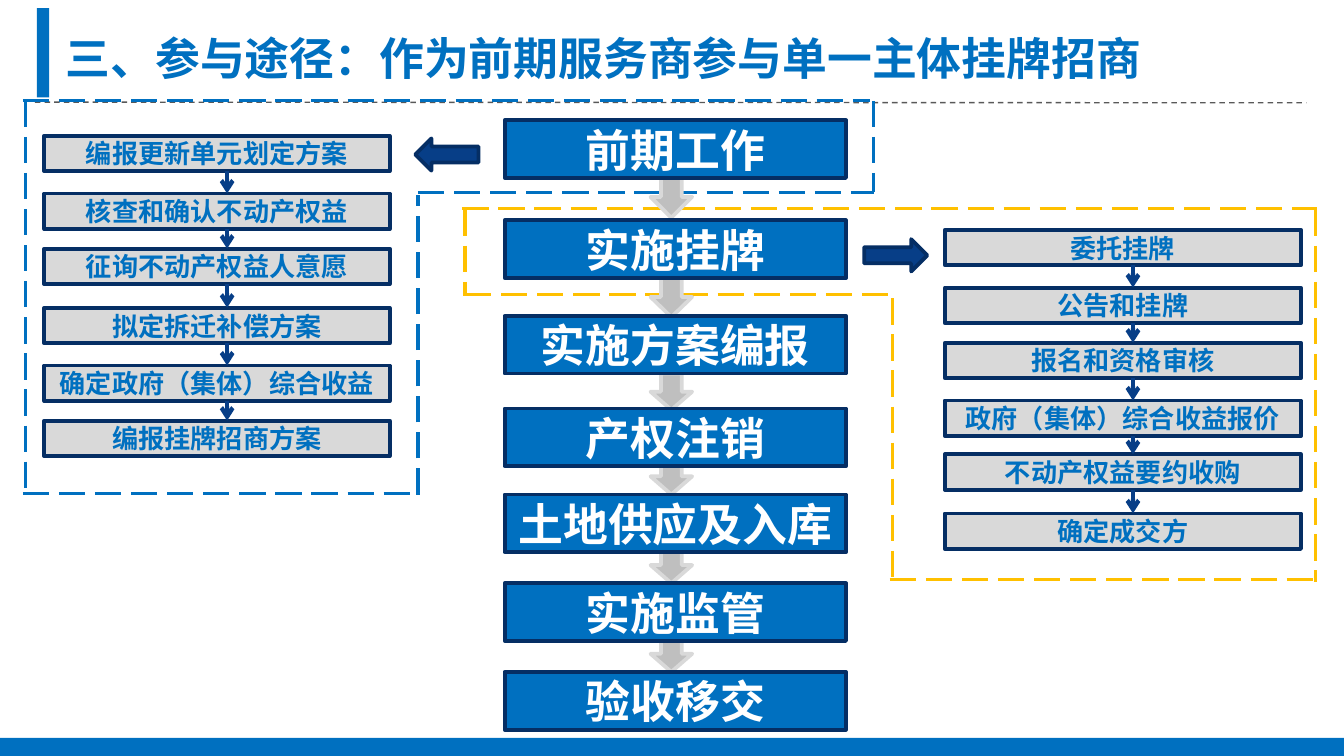
from dataclasses import dataclass
from itertools import pairwise
from typing import NamedTuple

from lxml.etree import SubElement
from pptx import Presentation
from pptx.dml.color import RGBColor
from pptx.enum.dml import MSO_LINE
from pptx.enum.shapes import MSO_CONNECTOR, MSO_SHAPE
from pptx.enum.text import MSO_ANCHOR, MSO_AUTO_SIZE, PP_ALIGN
from pptx.oxml.ns import qn
from pptx.util import Inches, Pt


@dataclass(frozen=True)
class Theme:
    face: str = "Noto Sans CJK SC"
    blue: str = "0070C0"
    navy: str = "052E64"
    deep: str = "073E87"
    pale: str = "D9D9D9"
    grey: str = "BFBFBF"
    dark: str = "595959"
    gold: str = "FFC000"
    white: str = "FFFFFF"
    big: int = 24
    small: int = 14
    edge: float = 2
    link: float = 2.25
    frame: float = 1.75
    rule: float = 0.75


class Area(NamedTuple):
    """Left, top, width and height in grid cells."""
    x: float
    y: float
    w: float
    h: float


class Stage(NamedTuple):
    text: str
    top: float
    arrow: tuple[float, float] | None = None  # top and height


class Chain(NamedTuple):
    left: float
    width: float
    axis: float
    steps: list[tuple[str, float]]


THEME = Theme()
COLS, ROWS = 100, 56.25  # square cells over the whole slide
WIDE = 10
STEP_H = 2.65
STAGE_X, STAGE_W, STAGE_H = 37.55, 25.4, 4.3
ARROW_X, ARROW_W = 48.4, 3.1

STAGES = [
    Stage("前期工作", 8.95, (12.7, 3.5)),
    Stage("实施挂牌", 16.4, (20.6, 3)),
    Stage("实施方案编报", 23.5, (27.8, 2.7)),
    Stage("产权注销", 30.4, (34.1, 2.7)),
    Stage("土地供应及入库", 36.8, (40.7, 2.7)),
    Stage("实施监管", 43.4, (47.3, 2.7)),
    Stage("验收移交", 50),
]
CHAINS = [
    Chain(3.3, 25.7, 16.9, [
        ("编报更新单元划定方案", 10.1), ("核查和确认不动产权益", 14.4),
        ("征询不动产权益人意愿", 18.5), ("拟定拆迁补偿方案", 22.9),
        ("确定政府（集体）综合收益", 27.2), ("编报挂牌招商方案", 31.3)]),
    Chain(70.3, 26.5, 84.3, [
        ("委托挂牌", 17.1), ("公告和挂牌", 21.4),
        ("报名和资格审核", 25.5), ("政府（集体）综合收益报价", 29.8),
        ("不动产权益要约收购", 33.8), ("确定成交方", 38.2)]),
]
FRAMES = {
    THEME.blue: [
        (1.7, 7.5, 64.7, 7.5), (1.9, 7.5, 1.9, 36.8), (1.7, 36.7, 31.1, 36.7),
        (31.1, 36.8, 31.1, 14.5), (31.1, 14.3, 65, 14.3), (65, 7.5, 65, 14.3)],
    THEME.gold: [
        (34.4, 15.5, 98, 15.5), (34.6, 15.6, 34.6, 22), (34.6, 21.9, 66.5, 21.9),
        (66.4, 22.2, 66.4, 42.9), (66.2, 43.1, 98.1, 43.1), (97.9, 15.6, 97.9, 43.3)],
}


def cell(count: float) -> int:
    return Inches(count * WIDE / COLS)


def tint(code: str) -> RGBColor:
    return RGBColor.from_string(code)


def style(para, size: int, color: str) -> None:
    font = para.font
    font.size, font.bold, font.name = Pt(size), True, THEME.face
    font.color.rgb = tint(color)
    # East Asian text takes its face from a:ea
    props = para._p.pPr.find(qn("a:defRPr"))
    SubElement(props, qn("a:ea")).set("typeface", THEME.face)


def block(shapes, kind, area: Area, fill: str, edge: str | None = None):
    shape = shapes.add_shape(kind, *map(cell, area))
    shape.shadow.inherit = False
    shape.fill.solid()
    shape.fill.fore_color.rgb = tint(fill)
    if edge:
        shape.line.color.rgb = tint(edge)
        shape.line.width = Pt(THEME.edge)
    else:
        shape.line.fill.background()
    return shape


def label(shapes, text: str, area: Area, fill: str, color: str, size: int) -> None:
    """Draw a bordered box with centred text."""
    frame = block(shapes, MSO_SHAPE.RECTANGLE, area, fill, THEME.navy).text_frame
    frame.word_wrap = True
    frame.vertical_anchor = MSO_ANCHOR.MIDDLE
    para = frame.paragraphs[0]
    para.text, para.alignment = text, PP_ALIGN.CENTER
    style(para, size, color)


def stroke(shapes, ends: tuple, color: str, width: float, dash=None, tip=False) -> None:
    line = shapes.add_connector(MSO_CONNECTOR.STRAIGHT, *map(cell, ends))
    line.line.color.rgb = tint(color)
    line.line.width = Pt(width)
    if dash:
        line.line.dash_style = dash
    if tip:
        SubElement(line.line._get_or_add_ln(), qn("a:tailEnd")).set("type", "arrow")
    SubElement(line._element.spPr, qn("a:effectLst"))


def head(shapes) -> None:
    """Draw the bars, the rule and the title."""
    block(shapes, MSO_SHAPE.RECTANGLE, Area(2.75, 0.6, 0.9, 6.65), THEME.blue)
    stroke(shapes, (2.6, 7.6, 97.2, 7.65), THEME.dark, THEME.rule, MSO_LINE.DASH)
    block(shapes, MSO_SHAPE.RECTANGLE, Area(0, 54.9, COLS, ROWS - 54.9), THEME.blue)
    frame = shapes.add_textbox(*map(cell, Area(3.9, 1.8, 83.9, 9.1))).text_frame
    frame.word_wrap = True
    frame.auto_size = MSO_AUTO_SIZE.SHAPE_TO_FIT_TEXT
    para = frame.paragraphs[0]
    para.text = "三、参与途径：作为前期服务商参与单一主体挂牌招商"
    style(para, THEME.big, THEME.blue)


def draw_chain(shapes, chain: Chain) -> None:
    for text, top in chain.steps:
        area = Area(chain.left, top, chain.width, STEP_H)
        label(shapes, text, area, THEME.pale, THEME.blue, THEME.small)
    for (_, top), (_, low) in pairwise(chain.steps):
        ends = (chain.axis, top + STEP_H, chain.axis, low)
        stroke(shapes, ends, THEME.deep, THEME.link, tip=True)


def draw_stage(shapes, stage: Stage) -> None:
    if stage.arrow:
        top, tall = stage.arrow
        area = Area(ARROW_X, top, ARROW_W, tall)
        block(shapes, MSO_SHAPE.DOWN_ARROW, area, THEME.grey, THEME.pale)
    area = Area(STAGE_X, stage.top, STAGE_W, STAGE_H)
    label(shapes, stage.text, area, THEME.blue, THEME.white, THEME.big)


def main() -> None:
    deck = Presentation()
    deck.slide_width, deck.slide_height = cell(COLS), cell(ROWS)
    shapes = deck.slides.add_slide(deck.slide_layouts[6]).shapes
    head(shapes)
    for chain in CHAINS:
        draw_chain(shapes, chain)
    block(shapes, MSO_SHAPE.LEFT_ARROW, Area(30.9, 10.3, 4.7, 2.4), THEME.deep, THEME.navy)
    block(shapes, MSO_SHAPE.RIGHT_ARROW, Area(64.3, 17.8, 4.7, 2.4), THEME.deep, THEME.navy)
    for color, sides in FRAMES.items():
        for ends in sides:
            stroke(shapes, ends, color, THEME.frame, MSO_LINE.LONG_DASH)
    for stage in STAGES:
        draw_stage(shapes, stage)
    deck.save("out.pptx")


if __name__ == "__main__":
    main()
